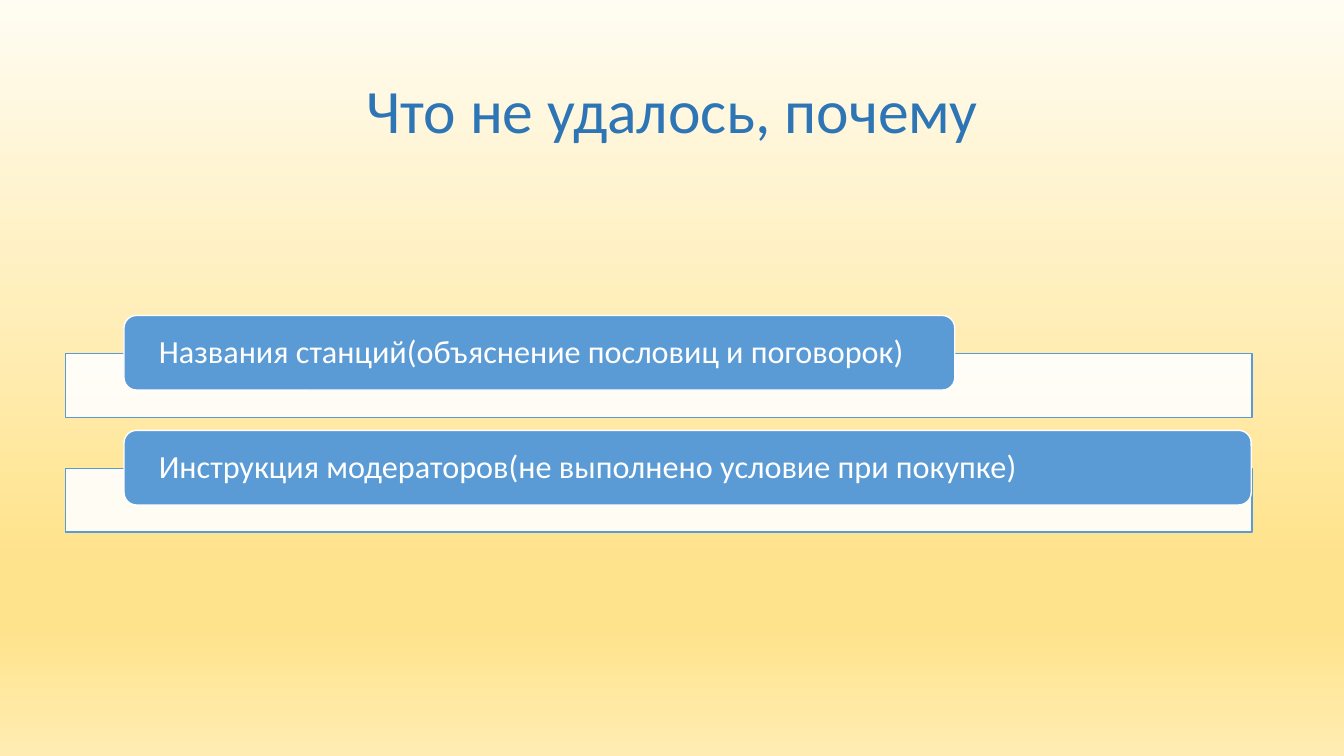
from lxml.etree import SubElement
from pptx import Presentation
from pptx.dml.color import RGBColor
from pptx.enum.shapes import MSO_SHAPE as SHAPE
from pptx.enum.text import MSO_ANCHOR as ANCHOR, PP_ALIGN as ALIGN
from pptx.oxml.ns import qn
from pptx.util import Inches, Pt

FONT = "Calibri"
WHITE, BLUE, TITLE_BLUE = "FFFFFF", "5B9BD5", "2E75B6"
BACKGROUND = [(0, "FFFCF2"), (74, "FFE38C"), (83, "FFE38C"), (100, "FFECB2")]
# Label text and label width
ITEMS = [
    ("Названия станций(объяснение пословиц и поговорок)", 8.24),
    ("Инструкция модераторов(не выполнено условие при покупке)", 11.18),
]


def rgb(color):
    return RGBColor.from_string(color)


def set_background(s, stops):
    fill = s.background.fill
    fill.gradient()
    fill.gradient_angle = 270
    stop_list = next(s.element.iter(qn("a:gsLst")))
    for old in list(stop_list):
        stop_list.remove(old)
    for percent, color in stops:
        stop = SubElement(stop_list, qn("a:gs"), pos=str(percent * 1000))
        SubElement(stop, qn("a:srgbClr"), val=color)


def write_text(tf, text, size, color, align):
    tf.word_wrap = True
    tf.vertical_anchor = ANCHOR.MIDDLE
    p = tf.paragraphs[0]
    p.alignment = align
    p.line_spacing = 0.9
    r = p.add_run()
    r.text = text
    r.font.name = FONT
    r.font.size = Pt(size)
    r.font.color.rgb = rgb(color)


def add_title(s, text, left, top, width, height):
    sp = s.shapes.title
    sp.left, sp.top = Inches(left), Inches(top)
    sp.width, sp.height = Inches(width), Inches(height)
    write_text(sp.text_frame, text, 44, TITLE_BLUE, ALIGN.CENTER)


def add_box(s, kind, left, top, width, height, fill, line):
    sp = s.shapes.add_shape(kind, Inches(left), Inches(top), Inches(width), Inches(height))
    sp.shadow.inherit = False
    sp.fill.solid()
    sp.fill.fore_color.rgb = rgb(fill)
    sp.line.color.rgb = rgb(line)
    sp.line.width = Pt(1)
    return sp


def add_list(s, items, left, top, width, pitch=1.14):
    for i, (text, label_width) in enumerate(items):
        y = top + i * pitch
        # Translucent bar behind the label
        bar = add_box(s, SHAPE.RECTANGLE, left, y + 0.38, width, 0.63, WHITE, BLUE)
        color = next(bar.element.spPr.iter(qn("a:srgbClr")))
        SubElement(color, qn("a:alpha"), val="90000")
        # Rounded label
        label = add_box(s, SHAPE.ROUNDED_RECTANGLE, left + 0.58, y, label_width, 0.74, BLUE, WHITE)
        tf = label.text_frame
        tf.margin_left = tf.margin_right = Inches(0.31)
        tf.margin_top = tf.margin_bottom = 0
        write_text(tf, text, 23, WHITE, ALIGN.LEFT)


def main():
    prs = Presentation()
    prs.slide_width, prs.slide_height = Inches(13.33), Inches(7.5)
    s = prs.slides.add_slide(prs.slide_layouts[5])
    set_background(s, BACKGROUND)
    add_title(s, "Что не удалось, почему", 0.92, 0.4, 11.5, 1.45)
    add_list(s, ITEMS, 0.65, 3.13, 11.77)
    prs.save("out.pptx")


if __name__ == "__main__":
    main()
